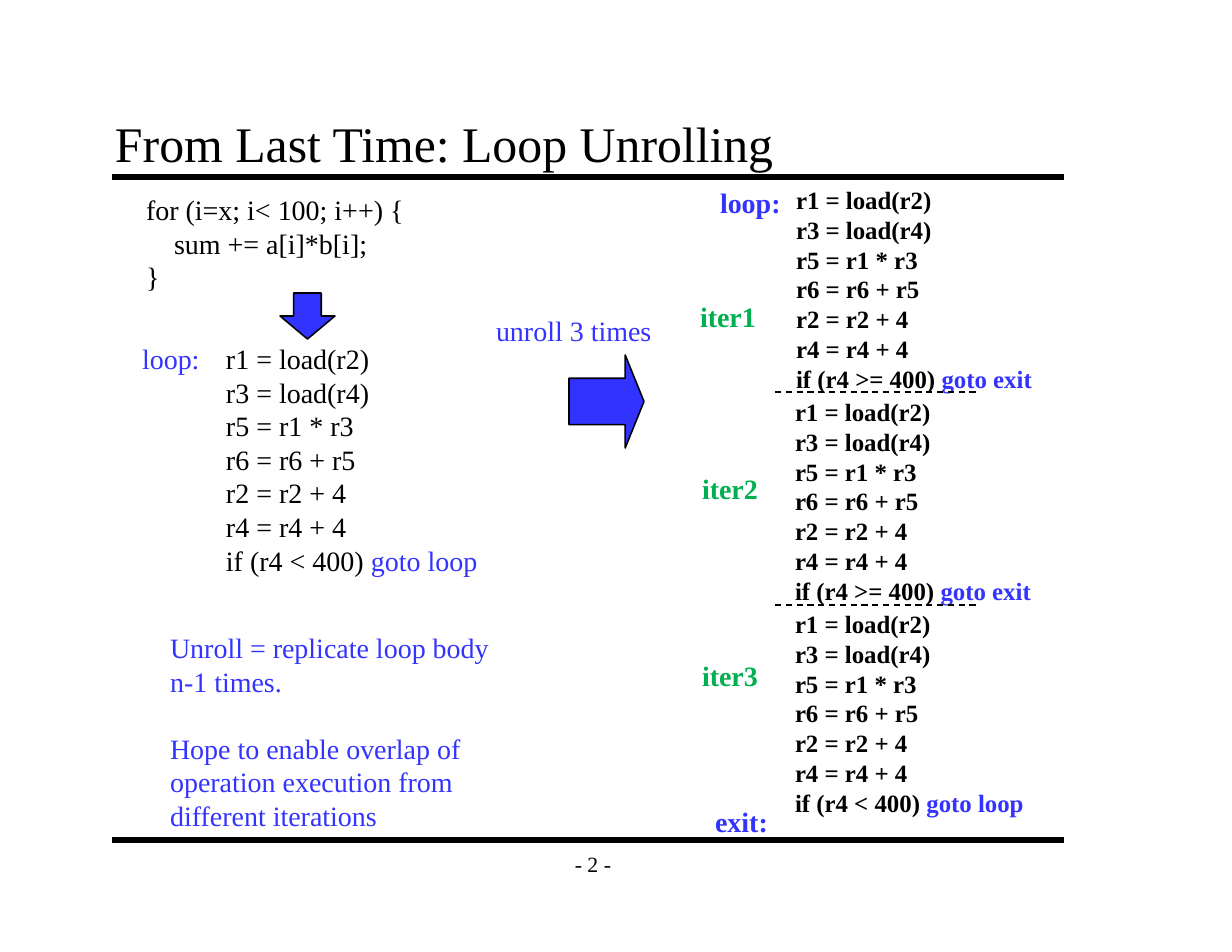
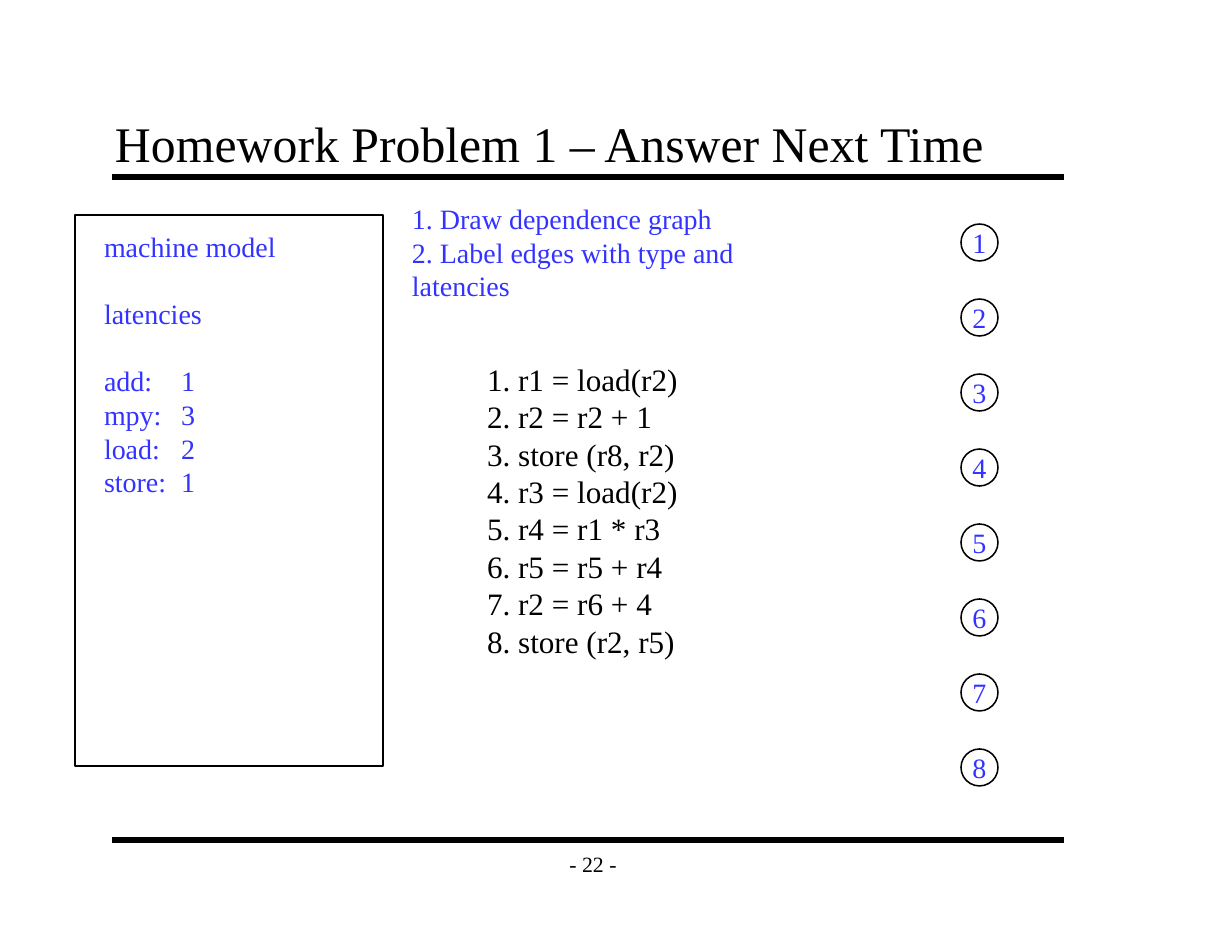
import pptx
import pptx.dml.color
import pptx.enum.dml
import pptx.enum.shapes
import pptx.enum.text
import pptx.oxml
import pptx.oxml.ns
import pptx.util

PX = 914400 / 112
FONT = "Times New Roman"
BLACK, BLUE, GREEN = "000000", "3333FF", "00B050"
LEFT = pptx.enum.text.PP_ALIGN.LEFT
CENTER = pptx.enum.text.PP_ALIGN.CENTER
TOP = pptx.enum.text.MSO_ANCHOR.TOP
MIDDLE = pptx.enum.text.MSO_ANCHOR.MIDDLE
SHAPE = pptx.enum.shapes.MSO_SHAPE

LOOP_BODY = ["r1 = load(r2)", "r3 = load(r4)", "r5 = r1 * r3",
             "r6 = r6 + r5", "r2 = r2 + 4", "r4 = r4 + 4"]


def px(n):
    return pptx.util.Emu(round(n * PX))


def rgb(color):
    return pptx.dml.color.RGBColor.from_string(color)


def write(tf, lines, size=18, color=BLACK, bold=False, align=LEFT, anchor=TOP,
          wrap=False, gaps=(), indents=None, tab=None):
    """Fill a text frame; a line is a string or a list of (text, color) runs."""
    tf.word_wrap = wrap
    tf.vertical_anchor = anchor
    leading = pptx.util.Pt(size * 1.2)
    for i, line in enumerate(lines):
        p = tf.paragraphs[0] if i == 0 else tf.add_paragraph()
        p.alignment = align
        p.line_spacing = leading
        p.space_before = leading if i in gaps else pptx.util.Pt(0)
        pPr = p._p.get_or_add_pPr()
        if indents and i in indents:
            pPr.set("marL", str(px(indents[i])))
        if tab:
            pPr.append(pptx.oxml.parse_xml(
                f'<a:tabLst {pptx.oxml.ns.nsdecls("a")}>'
                f'<a:tab pos="{px(tab)}" algn="l"/></a:tabLst>'))
        for text, run_color in [(line, color)] if isinstance(line, str) else line:
            r = p.add_run()
            r.text = text
            r.font.name = FONT
            r.font.size = pptx.util.Pt(size)
            r.font.bold = bold
            r.font.color.rgb = rgb(run_color)


def set_margins(tf, x, y):
    tf.margin_left = tf.margin_right = px(x)
    tf.margin_top = tf.margin_bottom = px(y)


def add_text(s, x, y, w, h, lines, **fmt):
    tf = s.shapes.add_textbox(px(x), px(y), px(w), px(h)).text_frame
    write(tf, lines, **fmt)
    tf.auto_size = pptx.enum.text.MSO_AUTO_SIZE.SHAPE_TO_FIT_TEXT
    return tf


def add_rule(s, x1, x2, y, width, dashed=False):
    line = s.shapes.add_connector(pptx.enum.shapes.MSO_CONNECTOR.STRAIGHT,
                                  px(x1), px(y), px(x2), px(y))
    line.line.color.rgb = rgb(BLACK)
    line.line.width = pptx.util.Pt(width)
    if dashed:
        line.line.dash_style = pptx.enum.dml.MSO_LINE.DASH
    line._element.spPr.append(pptx.oxml.parse_xml(
        f'<a:effectLst {pptx.oxml.ns.nsdecls("a")}/>'))


def add_outlined(s, kind, x, y, w, h, fill=None):
    sp = s.shapes.add_shape(kind, px(x), px(y), px(w), px(h))
    sp.shadow.inherit = False
    if fill:
        sp.fill.solid()
        sp.fill.fore_color.rgb = rgb(fill)
    else:
        sp.fill.background()
    sp.line.color.rgb = rgb(BLACK)
    sp.line.width = pptx.util.Pt(1)
    return sp


def add_slide(prs, title, number):
    """Slide with the shared title, rules and page number."""
    s = prs.slides.add_slide(prs.slide_layouts[5])
    for y in (177, 840):
        add_rule(s, 112, 1064, y, 4)
    tf = add_text(s, 551, 840, 84, 47, [f"- {number} -"], size=14,
                  align=CENTER, anchor=MIDDLE)
    tf.auto_size = pptx.enum.text.MSO_AUTO_SIZE.NONE
    set_margins(tf, 12, 7)
    sp = s.shapes.title
    sp.left, sp.top, sp.width, sp.height = px(103), px(104), px(952), px(75)
    set_margins(sp.text_frame, 12, 7)
    write(sp.text_frame, [title], size=32, wrap=True,
          anchor=pptx.enum.text.MSO_ANCHOR.BOTTOM)
    sp.text_frame.auto_size = pptx.enum.text.MSO_AUTO_SIZE.NONE
    return s


def loop_code(test, target):
    return LOOP_BODY + [[(f"if ({test}) ", BLACK), (f"goto {target}", BLUE)]]


def build_unrolling(prs):
    s = add_slide(prs, "From Last Time: Loop Unrolling", 2)

    # Source loop and its low-level form
    add_text(s, 135, 187, 282, 113,
             ["for (i=x; i< 100; i++) {", "sum += a[i]*b[i];", "}"],
             indents={1: 28})
    add_outlined(s, SHAPE.DOWN_ARROW, 280, 293, 55, 46, BLUE)
    add_text(s, 131, 336, 84, 45, ["loop:"], color=BLUE)
    add_text(s, 215, 336, 280, 246, loop_code("r4 < 400", "loop"))

    # Unrolling step
    add_text(s, 485, 308, 184, 45, ["unroll 3 times"], color=BLUE)
    arrow = add_outlined(s, SHAPE.RIGHT_ARROW, 569, 355, 75, 93, BLUE)
    arrow.adjustments[0], arrow.adjustments[1] = 0.5, 0.25
    add_text(s, 159, 625, 358, 215,
             ["Unroll = replicate loop body", "n-1 times.",
              "Hope to enable overlap of", "operation execution from",
              "different iterations"], color=BLUE, gaps=(2,))

    # Unrolled iterations
    iterations = [(785, 179, "r4 >= 400", "exit"),
                  (784, 391, "r4 >= 400", "exit"),
                  (784, 603, "r4 < 400", "loop")]
    for x, y, test, target in iterations:
        add_text(s, x, y, 270, 222, loop_code(test, target), size=16, bold=True)
    for y in (392, 605):
        add_rule(s, 775, 980, y, 1, dashed=True)

    # Labels beside the iterations
    labels = [("iter1", 689, 294, GREEN), ("iter2", 691, 466, GREEN),
              ("iter3", 691, 653, GREEN), ("loop:", 709, 180, BLUE),
              ("exit:", 704, 799, BLUE)]
    for text, x, y, color in labels:
        add_text(s, x, y, 90, 45, [text], color=color, bold=True)


def build_homework(prs):
    s = add_slide(prs, "Homework Problem 1 – Answer Next Time", 22)

    # Task and code
    add_text(s, 401, 196, 351, 112,
             ["1. Draw dependence graph", "2. Label edges with type and",
              "latencies"], color=BLUE)
    code = ["r1 = load(r2)", "r2 = r2 + 1", "store (r8, r2)", "r3 = load(r2)",
            "r4 = r1 * r3", "r5 = r5 + r4", "r2 = r6 + 4", "store (r2, r5)"]
    add_text(s, 476, 355, 220, 312,
             [f"{n}. {line}" for n, line in enumerate(code, 1)], size=20)

    # Machine model
    add_outlined(s, SHAPE.RECTANGLE, 75, 215, 308, 551)
    add_text(s, 93, 224, 202, 282,
             ["machine model", "latencies", "add:\t1", "mpy:\t3", "load:\t2",
              "store:\t1"], color=BLUE, gaps=(1, 2), tab=77)

    # Graph nodes, one per instruction
    for i in range(len(code)):
        node = add_outlined(s, SHAPE.OVAL, 961, 224 + i * 75, 37, 37)
        write(node.text_frame, [str(i + 1)], color=BLUE, align=CENTER,
              anchor=MIDDLE)


def main():
    prs = pptx.Presentation()
    prs.slide_width, prs.slide_height = px(1232), px(952)
    build_unrolling(prs)
    build_homework(prs)
    prs.save("out.pptx")


if __name__ == "__main__":
    main()
